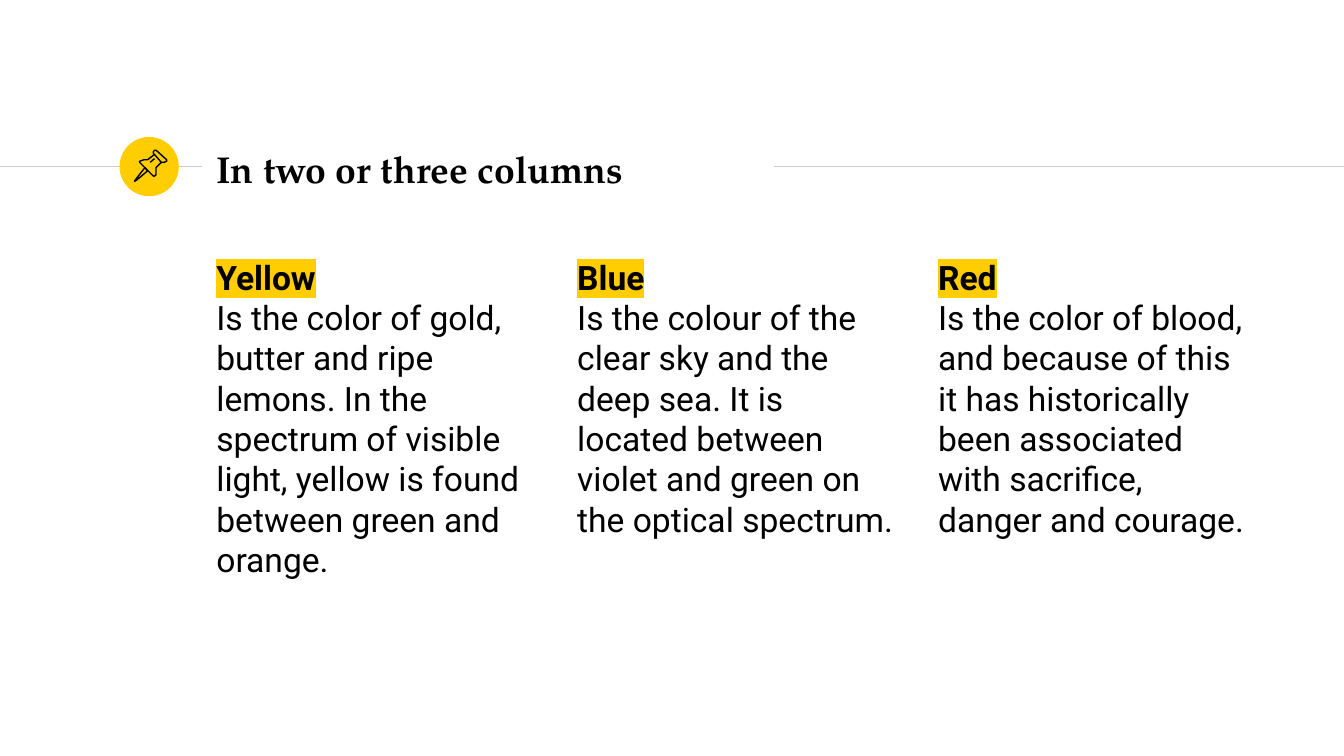
import pptx
import pptx.dml.color
import pptx.enum.shapes
import pptx.enum.text
import pptx.oxml.ns
import pptx.util
from lxml import etree
from pptx.util import Cm

BLACK, YELLOW, GREY = "000000", "FFCD00", "CCCCCC"
COLUMNS = [
    ("Yellow", "Is the color of gold, butter and ripe lemons. In the spectrum of "
               "visible light, yellow is found between green and orange."),
    ("Blue", "Is the colour of the clear sky and the deep sea. It is located "
             "between violet and green on the optical spectrum."),
    ("Red", "Is the color of blood, and because of this it has historically "
            "been associated with sacrifice, danger and courage."),
]
NEEDLE = [(0.48, 0.58), (0.3, 0.81), (0.28, 0.84), (0.33, 0.81), (0.53, 0.64)]
CAP = [(0.66, 0.33), (0.79, 0.48), (0.84, 0.48), (0.89, 0.46), (0.89, 0.43),
       (0.69, 0.25), (0.66, 0.25), (0.64, 0.28), (0.64, 0.31)]
BODY = [(0.66, 0.33), (0.53, 0.43), (0.46, 0.43), (0.38, 0.46), (0.38, 0.48),
        (0.64, 0.74), (0.66, 0.74), (0.69, 0.71), (0.69, 0.58), (0.79, 0.48)]
GLINT = [(0.58, 0.48), (0.66, 0.41)]
PIN = [(NEEDLE, True), (CAP, True), (BODY, False), (GLINT, False)]


def colour(value):
    """Return the colour for a hex string."""
    return pptx.dml.color.RGBColor.from_string(value)


def add_rule(page, left, right, y):
    """Draw a thin grey horizontal line."""
    rule = page.shapes.add_connector(
        pptx.enum.shapes.MSO_CONNECTOR.STRAIGHT, Cm(left), Cm(y), Cm(right), Cm(y))
    rule.line.color.rgb = colour(GREY)
    rule.line.width = pptx.util.Pt(0.75)
    etree.SubElement(rule._element.spPr, pptx.oxml.ns.qn("a:effectLst"))


def add_badge(page, left, top, size):
    """Draw the yellow disc with its pushpin."""
    disc = page.shapes.add_shape(
        pptx.enum.shapes.MSO_SHAPE.OVAL, Cm(left), Cm(top), Cm(size), Cm(size))
    disc.shadow.inherit = False
    disc.fill.solid()
    disc.fill.fore_color.rgb = colour(YELLOW)
    disc.line.fill.background()
    pin = page.shapes.add_group_shape()
    for outline, closed in PIN:
        points = [(Cm(left + x), Cm(top + y)) for x, y in outline]
        builder = pin.shapes.build_freeform(*points[0])
        builder.add_line_segments(points[1:], close=closed)
        part = builder.convert_to_shape()
        part.shadow.inherit = False
        part.fill.background()
        part.line.color.rgb = colour(BLACK)
        part.line.width = pptx.util.Pt(0.75)


def add_frame(page, left, top, width, height):
    """Add a wrapping text box and return its text frame."""
    frame = page.shapes.add_textbox(Cm(left), Cm(top), Cm(width), Cm(height)).text_frame
    frame.word_wrap = True
    frame.margin_left = frame.margin_right = Cm(0.25)
    frame.margin_top = frame.margin_bottom = Cm(0.25)
    return frame


def add_span(para, text, font, size, bold=False, highlight=None):
    """Append one formatted run to a paragraph."""
    span = para.add_run()
    span.text = text
    span.font.size = pptx.util.Pt(size)
    span.font.bold = bold
    span.font.color.rgb = colour(BLACK)
    if highlight:
        mark = etree.SubElement(span.font._element, pptx.oxml.ns.qn("a:highlight"))
        etree.SubElement(mark, pptx.oxml.ns.qn("a:srgbClr"), val=highlight)
    span.font.name = font


def add_heading(page, left, top, width, height):
    """Write the slide title in its box."""
    frame = add_frame(page, left, top, width, height)
    frame.vertical_anchor = pptx.enum.text.MSO_ANCHOR.MIDDLE
    add_span(frame.paragraphs[0], "In two or three columns", "TeX Gyre Pagella", 20, True)


def add_columns(page, left, top, width, height, gap):
    """Set the text columns side by side in the given box."""
    column_width = (width - gap * (len(COLUMNS) - 1)) / len(COLUMNS)
    for index, (name, text) in enumerate(COLUMNS):
        frame = add_frame(
            page, left + index * (column_width + gap), top, column_width, height)
        add_span(frame.paragraphs[0], name, "Roboto", 18, True, YELLOW)
        add_span(frame.add_paragraph(), text, "Roboto", 18)


def main():
    """Build and save the deck."""
    deck = pptx.Presentation()
    deck.slide_width, deck.slide_height = Cm(25.4), Cm(14.29)
    page = deck.slides.add_slide(deck.slide_layouts[6])
    add_rule(page, 0, 3.81, 3.15)
    add_badge(page, 2.26, 2.59, 1.12)
    add_rule(page, 14.63, 25.4, 3.15)
    add_heading(page, 3.84, 2.57, 10.77, 1.22)
    add_columns(page, 3.84, 4.6, 20.12, 8.66, 0.34)
    deck.save("out.pptx")


if __name__ == "__main__":
    main()
